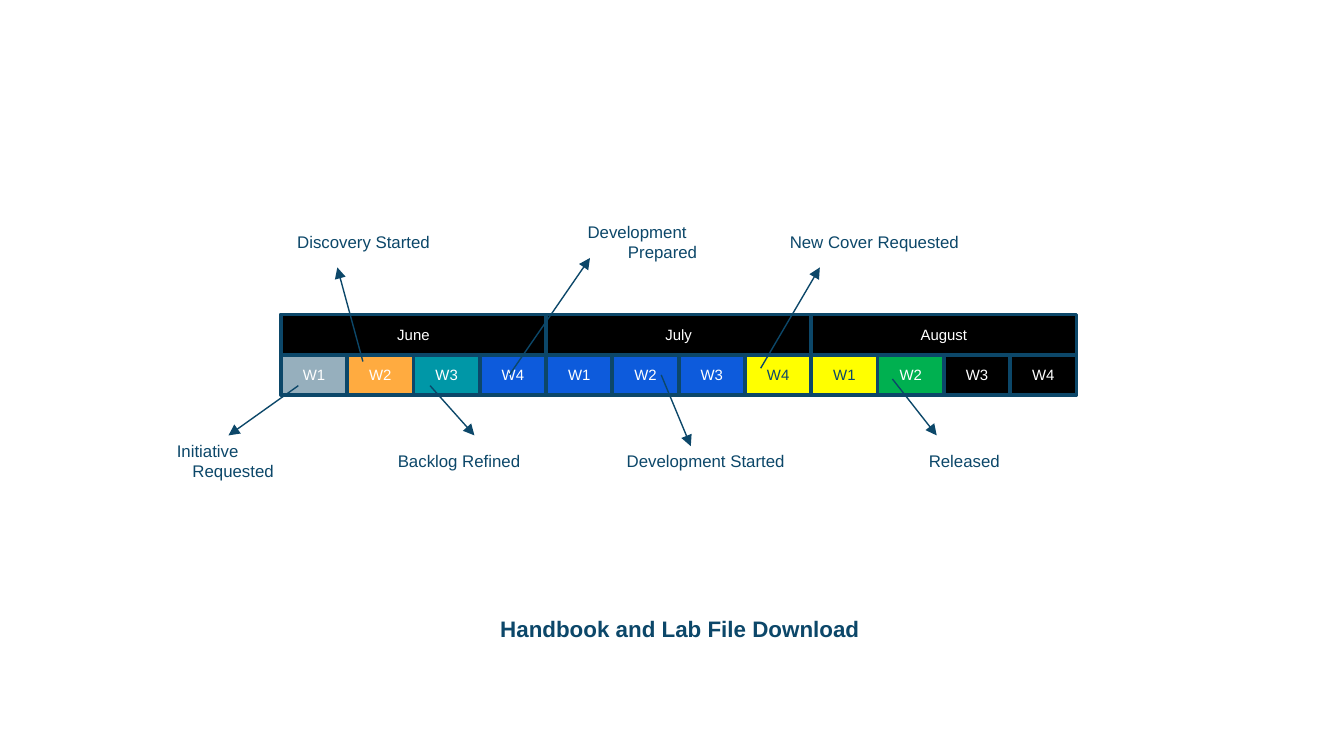
import pptx
import pptx.util
import pptx.dml.color
import pptx.enum.shapes
import pptx.enum.text
import pptx.oxml
import lxml.etree

Inches = pptx.util.Inches
Pt = pptx.util.Pt
RGBColor = pptx.dml.color.RGBColor

NAVY = RGBColor(0x0C, 0x47, 0x69)
WHITE = RGBColor(0xFF, 0xFF, 0xFF)
BLACK = RGBColor(0x00, 0x00, 0x00)
GREY = RGBColor(0x96, 0xAF, 0xBD)
ORANGE = RGBColor(0xFF, 0xAB, 0x40)
TEAL = RGBColor(0x00, 0x97, 0xA7)
BLUE = RGBColor(0x0D, 0x5B, 0xDC)
YELLOW = RGBColor(0xFF, 0xFF, 0x00)
GREEN = RGBColor(0x00, 0xB0, 0x50)

deck = pptx.Presentation()
deck.slide_width = Inches(10)
deck.slide_height = Inches(10 * 9 / 16)
slide = deck.slides.add_slide(deck.slide_layouts[6])


def write(shape, text, color, size, bold=False):
    frame = shape.text_frame
    frame.word_wrap = True
    frame.vertical_anchor = pptx.enum.text.MSO_ANCHOR.MIDDLE
    para = frame.paragraphs[0]
    para.text = text
    para.alignment = pptx.enum.text.PP_ALIGN.CENTER
    look = {"name": "Arial", "size": Pt(size), "bold": bold}
    for key, value in look.items():
        setattr(para.runs[0].font, key, value)
    para.runs[0].font.color.rgb = color
    return para


def label(text, left, top, width, size=9, bold=False):
    box = slide.shapes.add_textbox(Inches(left), Inches(top), Inches(width), Inches(0.38))
    for side in ("left", "top", "right", "bottom"):
        setattr(box.text_frame, "margin_" + side, Inches(0.1))
    para = write(box, text, NAVY, size, bold)
    props = para._p.get_or_add_pPr()
    for key, value in {"marL": Inches(0.5), "indent": Inches(-0.38)}.items():
        props.set(key, str(value))
    return para


LEFT, TOP, HIGH = 2.09, 2.34, 0.3
WEEK = 5.92 / 12
fills = [GREY, ORANGE, TEAL] + [BLUE] * 4 + [YELLOW] * 2 + [GREEN] + [BLACK] * 2
cells = [(f"W{i % 4 + 1}", i, 1, TOP + HIGH, fill) for i, fill in enumerate(fills)]
cells += [(name, i * 4, 4, TOP, BLACK) for i, name in enumerate(["June", "July", "August"])]
for text, start, span, top, fill in cells:
    cell = slide.shapes.add_shape(
        pptx.enum.shapes.MSO_SHAPE.RECTANGLE,
        Inches(LEFT + start * WEEK), Inches(top), Inches(span * WEEK), Inches(HIGH))
    cell.shadow.inherit = False
    cell.fill.solid()
    cell.fill.fore_color.rgb = fill
    cell.line.color.rgb = NAVY
    cell.line.width = Pt(2)
    write(cell, text, NAVY if fill == YELLOW else WHITE, 8)

UPPER, LOWER = 1.61, 3.24
events = [
    ("Initiative Requested", 0.8, LOWER, 1.37, (2.22, 2.87, 1.7, 3.24)),
    ("Discovery Started", 1.96, UPPER, 1.37, (2.7, 2.69, 2.51, 1.99)),
    ("Backlog Refined", 2.67, LOWER, 1.37, (3.2, 2.87, 3.53, 3.24)),
    ("Released", 6.43, LOWER, 1.37, (6.64, 2.82, 6.97, 3.24)),
    ("New Cover Requested", 5.57, UPPER, 1.75, (5.66, 2.74, 6.1, 1.99)),
    ("Development Prepared", 3.88, UPPER, 1.6, (3.79, 2.79, 4.39, 1.92)),
    ("Development Started", 4.39, LOWER, 1.6, (4.92, 2.79, 5.14, 3.32)),
]
for text, left, top, width, ends in events:
    label(text, left, top, width)
    arrow = slide.shapes.add_connector(
        pptx.enum.shapes.MSO_CONNECTOR.STRAIGHT, *[Inches(n) for n in ends])
    arrow.line.color.rgb = NAVY
    arrow.line.width = Pt(0.75)
    tail = lxml.etree.SubElement(arrow.line._get_or_add_ln(), pptx.oxml.ns.qn("a:tailEnd"))
    tail.set("type", "triangle")
    lxml.etree.SubElement(arrow._element.spPr, pptx.oxml.ns.qn("a:effectLst"))

title = label("Handbook and Lab File Download", 1.97, 4.5, 6.06, 12, True)
title.line_spacing = 0.9

deck.save("out.pptx")
